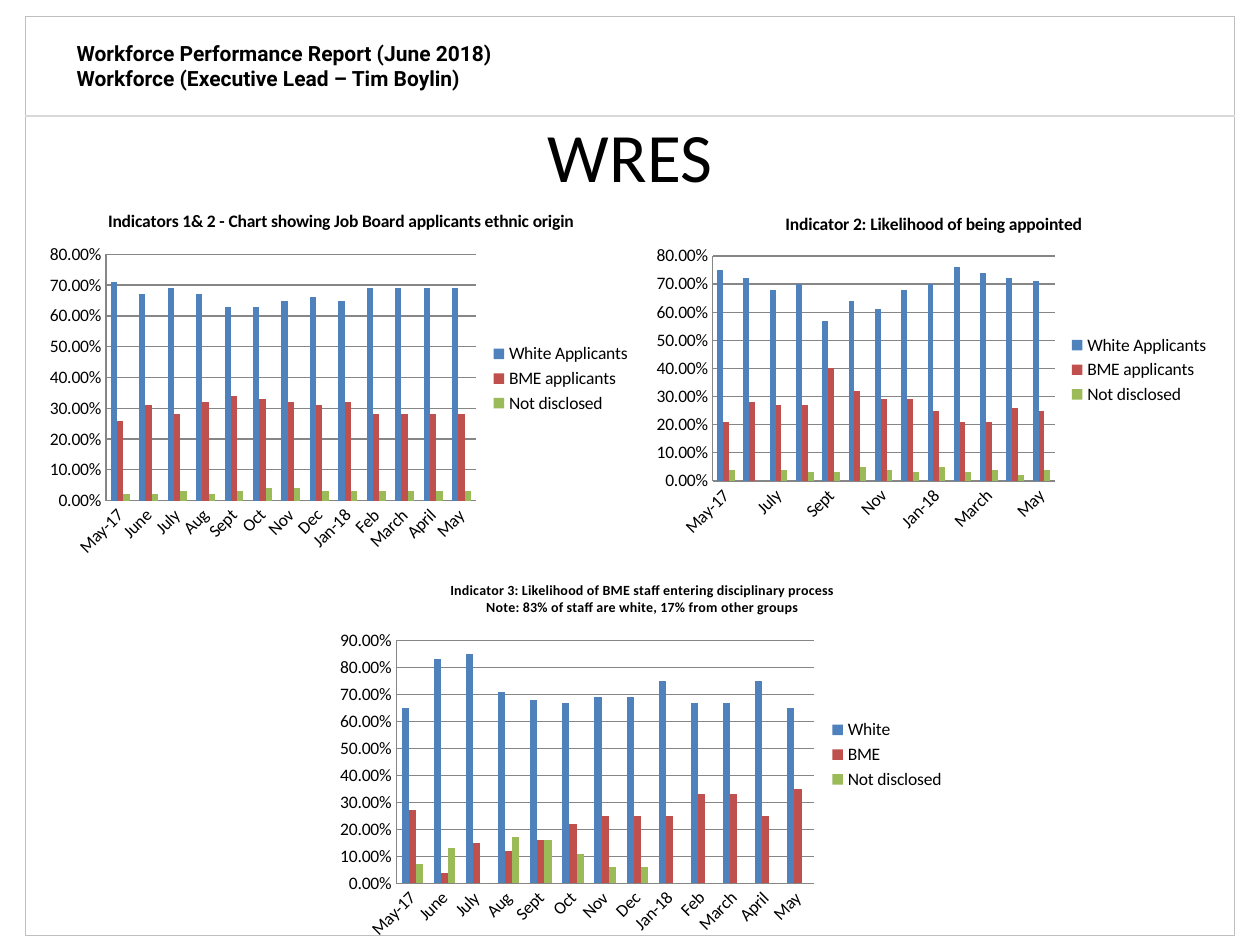
from dataclasses import dataclass

from lxml.etree import SubElement
from pptx import Presentation
from pptx.chart.data import CategoryChartData
from pptx.dml.color import RGBColor
from pptx.enum.chart import XL_CHART_TYPE as ChartType
from pptx.enum.chart import XL_LEGEND_POSITION as LegendPosition
from pptx.enum.chart import XL_TICK_MARK as TickMark
from pptx.enum.shapes import MSO_CONNECTOR as Connector
from pptx.enum.shapes import MSO_SHAPE as Shape
from pptx.enum.text import MSO_ANCHOR as Anchor
from pptx.enum.text import PP_ALIGN as Align
from pptx.oxml.ns import qn
from pptx.util import Inches, Pt


@dataclass(frozen=True)
class Theme:
    text: RGBColor = RGBColor(0x00, 0x00, 0x00)
    frame: RGBColor = RGBColor(0xBF, 0xBF, 0xBF)
    rule: RGBColor = RGBColor(0xD9, 0xD9, 0xD9)
    grid: RGBColor = RGBColor(0x86, 0x86, 0x86)
    groups: tuple = (RGBColor(0x4F, 0x81, 0xBD), RGBColor(0xC0, 0x50, 0x4D),
                     RGBColor(0x9B, 0xBB, 0x59))
    header_font: str = "Roboto"
    body_font: str = "Calibri"
    title_size: float = 39.6
    header_size: float = 12
    chart_size: float = 10
    note_size: float = 8


THEME = Theme()

MONTHS = ["May-17", "June", "July", "Aug", "Sept", "Oct", "Nov", "Dec",
          "Jan-18", "Feb", "March", "April", "May"]

APPLICANTS = {
    "White Applicants": [0.71, 0.67, 0.69, 0.67, 0.63, 0.63, 0.65, 0.66,
                         0.65, 0.69, 0.69, 0.69, 0.69],
    "BME applicants": [0.26, 0.31, 0.28, 0.32, 0.34, 0.33, 0.32, 0.31,
                       0.32, 0.28, 0.28, 0.28, 0.28],
    "Not disclosed": [0.02, 0.02, 0.03, 0.02, 0.03, 0.04, 0.04, 0.03,
                      0.03, 0.03, 0.03, 0.03, 0.03],
}
APPOINTED = {
    "White Applicants": [0.75, 0.72, 0.68, 0.70, 0.57, 0.64, 0.61, 0.68,
                         0.70, 0.76, 0.74, 0.72, 0.71],
    "BME applicants": [0.21, 0.28, 0.27, 0.27, 0.40, 0.32, 0.29, 0.29,
                       0.25, 0.21, 0.21, 0.26, 0.25],
    "Not disclosed": [0.04, None, 0.04, 0.03, 0.03, 0.05, 0.04, 0.03,
                      0.05, 0.03, 0.04, 0.02, 0.04],
}
DISCIPLINARY = {
    "White": [0.65, 0.83, 0.85, 0.71, 0.68, 0.67, 0.69, 0.69,
              0.75, 0.67, 0.67, 0.75, 0.65],
    "BME": [0.27, 0.04, 0.15, 0.12, 0.16, 0.22, 0.25, 0.25,
            0.25, 0.33, 0.33, 0.25, 0.35],
    "Not disclosed": [0.07, 0.13, 0, 0.17, 0.16, 0.11, 0.06, 0.06,
                      0, 0, 0, None, None],
}


def style_font(font, size, name=THEME.body_font, bold=False):
    font.name = name
    font.size = Pt(size)
    font.bold = bold
    font.color.rgb = THEME.text


def add_lines(text_frame, lines, **style):
    """Write one paragraph for each line."""
    for index, line in enumerate(lines):
        paragraph = text_frame.paragraphs[0] if index == 0 else text_frame.add_paragraph()
        run = paragraph.add_run()
        run.text = line
        style_font(run.font, **style)


def add_page_frame(slide, left, top, width, height):
    """Outer frame, report heading and the rule under it."""
    frame = slide.shapes.add_shape(Shape.RECTANGLE, left, top, width, height)
    frame.shadow.inherit = False
    frame.fill.background()
    frame.line.color.rgb = THEME.frame
    frame.line.width = Pt(0.25)

    rule_y = top + Inches(0.79)
    rule = slide.shapes.add_connector(Connector.STRAIGHT, left, rule_y, left + width, rule_y)
    rule.line.color.rgb = THEME.rule
    rule.line.width = Pt(0.75)
    SubElement(rule.element.spPr, qn("a:effectLst"))

    heading = slide.shapes.add_textbox(left + Inches(0.31), top + Inches(0.14),
                                       Inches(5), Inches(0.5))
    heading.text_frame.word_wrap = True
    add_lines(heading.text_frame,
              ["Workforce Performance Report (June 2018)",
               "Workforce (Executive Lead – Tim Boylin)"],
              size=THEME.header_size, name=THEME.header_font, bold=True)


def add_title(slide, left, top, width, height):
    title = slide.shapes.title
    title.left, title.top, title.width, title.height = left, top, width, height
    title.text_frame.vertical_anchor = Anchor.MIDDLE
    add_lines(title.text_frame, ["WRES"], size=THEME.title_size)
    title.text_frame.paragraphs[0].alignment = Align.CENTER


def add_indicator_chart(slide, box, title_lines, title_size, groups, top_value):
    """Clustered monthly columns, one colour for each ethnic group."""
    data = CategoryChartData(number_format="0.00%")
    data.categories = MONTHS
    for group, shares in groups.items():
        data.add_series(group, shares)
    chart = slide.shapes.add_chart(ChartType.COLUMN_CLUSTERED, *box, data).chart
    style_font(chart.font, THEME.chart_size)

    chart.has_title = True
    add_lines(chart.chart_title.text_frame, title_lines, size=title_size, bold=True)
    chart.chart_title.include_in_layout = False

    chart.has_legend = True
    chart.legend.position = LegendPosition.RIGHT
    chart.legend.include_in_layout = False

    plot = chart.plots[0]
    plot.gap_width = 150
    plot.overlap = 0
    plot.vary_by_categories = False
    for series, color in zip(plot.series, THEME.groups):
        series.format.fill.solid()
        series.format.fill.fore_color.rgb = color
        series.invert_if_negative = False

    months, shares = chart.category_axis, chart.value_axis
    shares.minimum_scale, shares.maximum_scale, shares.major_unit = 0, top_value, 0.1
    shares.tick_labels.number_format = "0.00%"
    shares.tick_labels.number_format_is_linked = False
    shares.has_major_gridlines = True
    for line in (months.format.line, shares.format.line, shares.major_gridlines.format.line):
        line.color.rgb = THEME.grid
        line.width = Pt(0.75)
    for axis in (months, shares):
        axis.major_tick_mark = axis.minor_tick_mark = TickMark.NONE


def main():
    deck = Presentation()
    deck.slide_width, deck.slide_height = Inches(10), Inches(7.5)
    slide = deck.slides.add_slide(deck.slide_layouts.get_by_name("Title Only"))

    add_page_frame(slide, Inches(0.2), Inches(0.13), Inches(9.6), Inches(7.29))
    add_title(slide, Inches(0.5), Inches(0.85), Inches(9), Inches(0.75))

    charts = [
        ((0.3, 1.53, 4.81, 2.95),
         ["Indicators 1& 2 - Chart showing Job Board applicants ethnic origin"],
         THEME.chart_size, APPLICANTS, 0.8),
        ((5.12, 1.55, 4.58, 2.77), ["Indicator 2: Likelihood of being appointed"],
         THEME.chart_size, APPOINTED, 0.8),
        ((2.6, 4.46, 5, 3.06),
         ["Indicator 3: Likelihood of BME staff entering disciplinary process",
          "Note: 83% of staff are white, 17% from other groups"],
         THEME.note_size, DISCIPLINARY, 0.9),
    ]
    for box, *content in charts:
        add_indicator_chart(slide, [Inches(length) for length in box], *content)

    deck.save("out.pptx")


if __name__ == "__main__":
    main()
